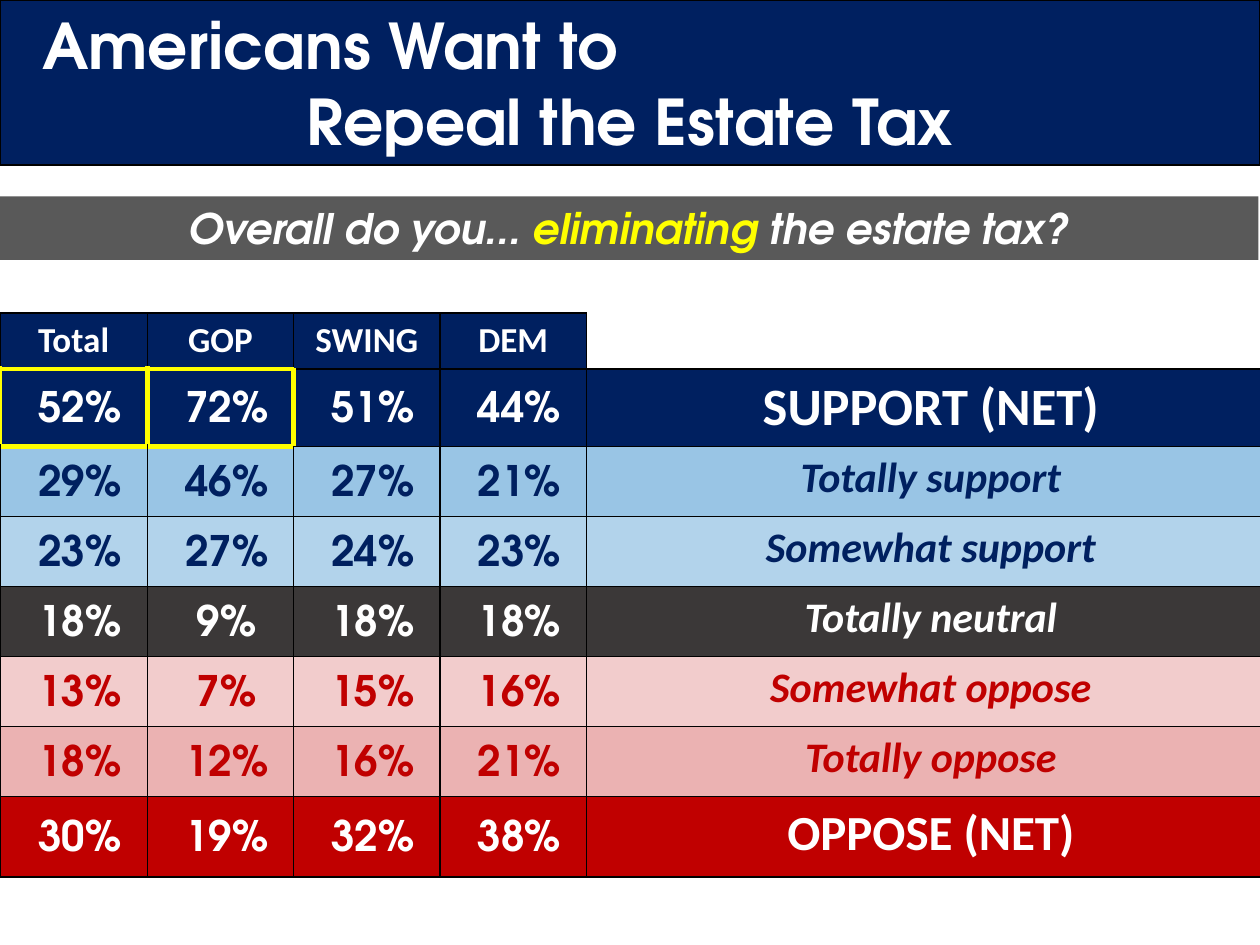
from lxml.etree import SubElement
from pptx import Presentation
from pptx.dml.color import RGBColor
from pptx.enum.shapes import MSO_SHAPE as Shape
from pptx.enum.text import MSO_ANCHOR as Anchor, PP_ALIGN as Align
from pptx.oxml.ns import qn
from pptx.util import Cm, Pt

NAVY = RGBColor(0x00, 0x20, 0x60)
BLUE = RGBColor(0x00, 0x70, 0xC0)
RED = RGBColor(0xC0, 0x00, 0x00)
CHARCOAL = RGBColor(0x3B, 0x38, 0x38)
GRAY = RGBColor(0x59, 0x59, 0x59)
YELLOW = RGBColor(0xFF, 0xFF, 0x00)
WHITE = RGBColor(0xFF, 0xFF, 0xFF)
BLACK = RGBColor(0x00, 0x00, 0x00)
HEADING_FONT, LABEL_FONT = "TeX Gyre Adventor", "Calibri"

# Content
TITLE = ["Americans Want to", "Repeal the Estate Tax"]
QUESTION = [("Overall do you... ", WHITE), ("eliminating", YELLOW),
            (" the estate tax?", WHITE)]
GROUPS = ["Total", "GOP", "SWING", "DEM"]
# Shares by group, answer, label size, italic label, text colour, fill, opacity %
ANSWERS = [
    (["52%", "72%", "51%", "44%"], "SUPPORT (NET)", 30, False, WHITE, NAVY, 100),
    (["29%", "46%", "27%", "21%"], "Totally support", 24, True, NAVY, BLUE, 40),
    (["23%", "27%", "24%", "23%"], "Somewhat support", 24, True, NAVY, BLUE, 30),
    (["18%", "9%", "18%", "18%"], "Totally neutral", 24, True, WHITE, CHARCOAL, 100),
    (["13%", "7%", "15%", "16%"], "Somewhat oppose", 24, True, RED, RED, 20),
    (["18%", "12%", "16%", "21%"], "Totally oppose", 24, True, RED, RED, 30),
    (["30%", "19%", "32%", "38%"], "OPPOSE (NET)", 28, False, WHITE, RED, 100),
]
HIGHLIGHTED = {(1, 0), (1, 1)}
COLUMN_WIDTHS = [2.97] + [2.95] * 3 + [13.64]
ROW_HEIGHTS = [1.08, 1.57] + [1.41] * 5 + [1.62]
SIDES = {"a:lnL": (0, -1), "a:lnR": (0, 1), "a:lnT": (-1, 0), "a:lnB": (1, 0)}


def style_font(run, size, color, name=HEADING_FONT, italic=False):
    font = run.font
    font.name, font.size, font.bold, font.italic = name, Pt(size), True, italic
    font.color.rgb = color


def add_banner(slide, left, top, width, height, color):
    banner = slide.shapes.add_shape(Shape.RECTANGLE, Cm(left), Cm(top), Cm(width), Cm(height))
    banner.shadow.inherit = False
    banner.fill.solid()
    banner.fill.fore_color.rgb = color
    banner.line.fill.background()
    banner.text_frame.word_wrap = True
    banner.text_frame.vertical_anchor = Anchor.MIDDLE
    return banner


def draw_borders(cell, row, column):
    properties = cell._tc.get_or_add_tcPr()
    corner = (0, len(GROUPS))
    for tag, (down, across) in SIDES.items():
        bright = HIGHLIGHTED & {(row, column), (row + down, column + across)}
        line = SubElement(properties, qn(tag), w=str(Pt(3 if bright else 1)))
        if (row, column) == corner and tag in ("a:lnR", "a:lnT"):
            SubElement(line, qn("a:noFill"))
        else:
            fill = SubElement(line, qn("a:solidFill"))
            SubElement(fill, qn("a:srgbClr"), val=str(YELLOW if bright else BLACK))


def fill_cell(cell, color, opacity):
    cell.fill.solid()
    cell.fill.fore_color.rgb = color
    if opacity < 100:
        tint = cell._tc.tcPr.find(qn("a:solidFill")).find(qn("a:srgbClr"))
        SubElement(tint, qn("a:alpha"), val=str(opacity * 1000))


def write_cell(cell, text, size, color, font, italic=False, spacing=1.0, margins=(0, 0, 0)):
    cell.margin_left = Cm(0.25)
    cell.margin_top, cell.margin_right, cell.margin_bottom = map(Cm, margins)
    cell.vertical_anchor = Anchor.MIDDLE
    paragraph = cell.text_frame.paragraphs[0]
    paragraph.text = text
    paragraph.alignment = Align.CENTER
    paragraph.line_spacing = spacing
    paragraph.space_after = Pt(size * 0.1)
    style_font(paragraph.runs[0], size, color, font, italic)


def main():
    deck = Presentation()
    deck.slide_width, deck.slide_height = Cm(25.4), Cm(19.05)
    slide = deck.slides.add_slide(deck.slide_layouts[6])

    # Title: first line at the left, second line centred
    title = add_banner(slide, 0, 0, 25.4, 3.33, NAVY)
    title.line.color.rgb = BLACK
    title.line.width = Pt(0.75)
    title.text_frame.text = "\n".join(TITLE)
    opening, closing = title.text_frame.paragraphs
    opening.alignment, closing.alignment = Align.LEFT, Align.CENTER
    opening._p.get_or_add_pPr().set("marL", str(Cm(0.6)))
    for line in (opening, closing):
        style_font(line.runs[0], 36, WHITE)

    # Survey question
    question = add_banner(slide, -0.03, 3.96, 25.4, 1.28, GRAY).text_frame.paragraphs[0]
    question.alignment = Align.CENTER
    for text, color in QUESTION:
        run = question.add_run()
        run.text = text
        style_font(run, 24, color, italic=True)

    # Results table
    results = slide.shapes.add_table(
        len(ROW_HEIGHTS), len(COLUMN_WIDTHS), Cm(0), Cm(6.31),
        Cm(sum(COLUMN_WIDTHS)), Cm(sum(ROW_HEIGHTS))).table
    results.first_row = results.horz_banding = False
    for column, width in zip(results.columns, COLUMN_WIDTHS):
        column.width = Cm(width)
    for row, height in zip(results.rows, ROW_HEIGHTS):
        row.height = Cm(height)
    for r in range(len(ROW_HEIGHTS)):
        for c in range(len(COLUMN_WIDTHS)):
            draw_borders(results.cell(r, c), r, c)

    # Header row, with an empty corner above the answers
    for c, group in enumerate(GROUPS):
        fill_cell(results.cell(0, c), NAVY, 100)
        write_cell(results.cell(0, c), group, 20, WHITE, LABEL_FONT, margins=(0.13, 0.25, 0.13))
    results.cell(0, len(GROUPS)).fill.background()

    # Answer rows
    for r, (shares, answer, size, italic, color, fill, opacity) in enumerate(ANSWERS, 1):
        for c, share in enumerate(shares):
            write_cell(results.cell(r, c), share, 24, color, HEADING_FONT, spacing=1.15)
        write_cell(results.cell(r, len(shares)), answer, size, color, LABEL_FONT, italic,
                   margins=(0, 0, 0 if r == 1 else 0.13))
        for cell in results.rows[r].cells:
            fill_cell(cell, fill, opacity)

    deck.save("out.pptx")


if __name__ == "__main__":
    main()
